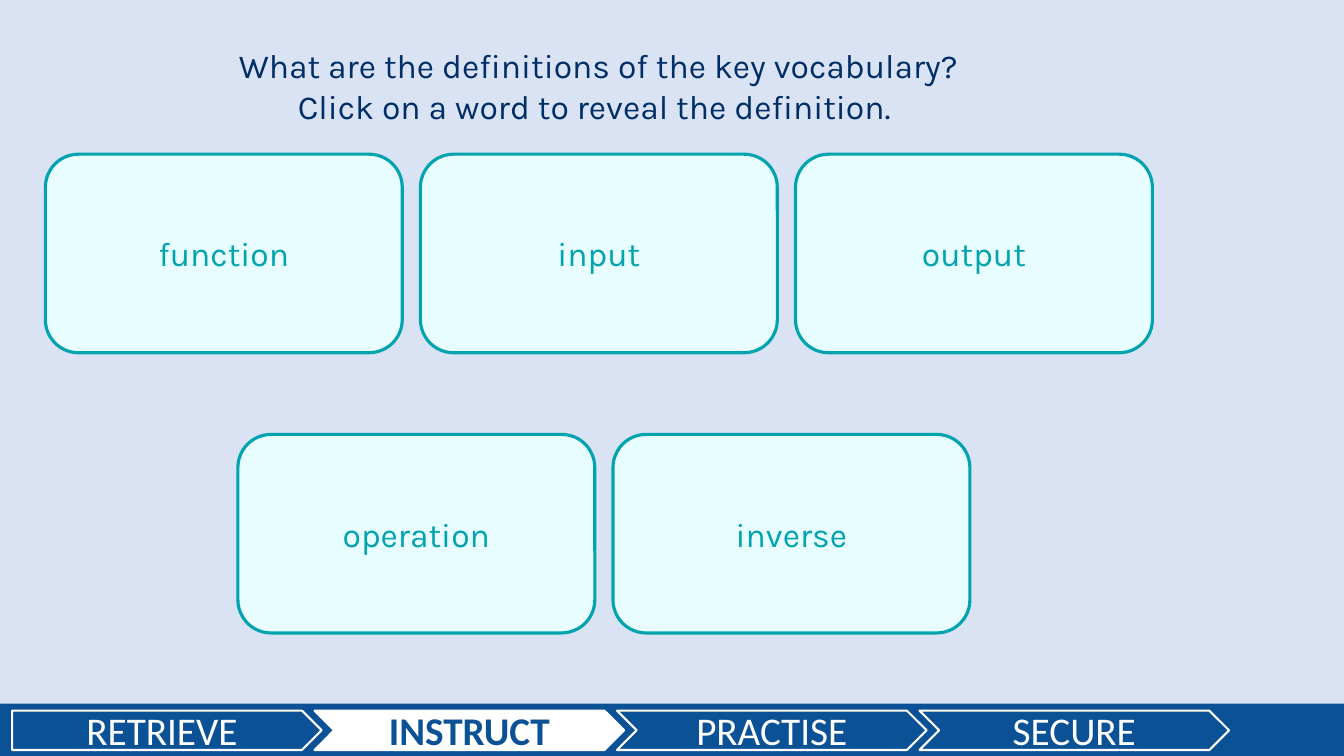
from pptx import Presentation
from pptx.dml.color import RGBColor
from pptx.enum.shapes import MSO_SHAPE as SHAPE
from pptx.enum.text import MSO_ANCHOR as ANCHOR, MSO_AUTO_SIZE as AUTO_SIZE, PP_ALIGN as ALIGN
from pptx.util import Inches, Pt

SKY, NAVY, BLUE, WHITE = "DAE3F3", "002E67", "0B5196", "FFFFFF"
TEAL, PALE_TEAL = "00A3AE", "E7FDFF"


def color(hex_code):
    return RGBColor.from_string(hex_code)


def write_line(paragraph, text, font_name, size, hex_code, bold=False):
    paragraph.alignment = ALIGN.CENTER
    run = paragraph.add_run()
    run.text = text
    run.font.name = font_name
    run.font.size = Pt(size)
    run.font.bold = bold
    run.font.color.rgb = color(hex_code)


def add_panel(slide, kind, box, fill, outline=None, weight=0):
    """Add a flat shape, outlined only when an outline colour is given."""
    panel = slide.shapes.add_shape(kind, *map(Inches, box))
    panel.shadow.inherit = False
    panel.fill.solid()
    panel.fill.fore_color.rgb = color(fill)
    if outline:
        panel.line.color.rgb = color(outline)
        panel.line.width = Pt(weight)
    else:
        panel.line.fill.background()
    panel.text_frame.vertical_anchor = ANCHOR.MIDDLE
    return panel


def add_lesson_bar(slide, left, top, width, height, steps, current):
    add_panel(slide, SHAPE.RECTANGLE, (left, top, width, height), BLUE)
    for i, step in enumerate(steps):
        active = step == current
        fill, ink = (WHITE, BLUE) if active else (BLUE, WHITE)
        arrow = add_panel(slide, SHAPE.CHEVRON if i else SHAPE.PENTAGON,
                          (left + 0.12 + 3 * i, top + 0.07, 3.07, 0.39),
                          fill, WHITE, 1.5)
        write_line(arrow.text_frame.paragraphs[0], step, "Calibri", 28, ink, active)


def add_prompt(slide, left, top, width, height, lines):
    prompt = slide.shapes.add_textbox(*map(Inches, (left, top, width, height)))
    frame = prompt.text_frame
    frame.word_wrap = True
    frame.auto_size = AUTO_SIZE.SHAPE_TO_FIT_TEXT
    for i, line in enumerate(lines):
        paragraph = frame.add_paragraph() if i else frame.paragraphs[0]
        write_line(paragraph, line, "Karla", 24, NAVY)


def add_word_row(slide, left, top, width, height, words, gap=0.18):
    """Share the width between equal word cards."""
    card_width = (width - gap * (len(words) - 1)) / len(words)
    for i, word in enumerate(words):
        card = add_panel(slide, SHAPE.ROUNDED_RECTANGLE,
                         (left + i * (card_width + gap), top, card_width, height),
                         PALE_TEAL, TEAL, 2.25)
        card.text_frame.word_wrap = False
        write_line(card.text_frame.paragraphs[0], word, "Karla", 24, TEAL)


def main():
    deck = Presentation()
    deck.slide_width, deck.slide_height = Inches(13.33), Inches(7.5)
    slide = deck.slides.add_slide(deck.slide_layouts[6])
    slide.background.fill.solid()
    slide.background.fill.fore_color.rgb = color(SKY)

    add_lesson_bar(slide, 0, 6.98, 13.33, 0.52,
                   ["RETRIEVE", "INSTRUCT", "PRACTISE", "SECURE"], "INSTRUCT")
    add_prompt(slide, 0, 0.4, 11.87, 0.91,
               ["What are the definitions of the key vocabulary?",
                "Click on a word to reveal the definition. "])
    add_word_row(slide, 0.45, 1.53, 10.98, 1.97, ["function", "input", "output"])
    add_word_row(slide, 2.36, 4.31, 7.26, 1.97, ["operation", "inverse"])
    deck.save("out.pptx")


if __name__ == "__main__":
    main()
